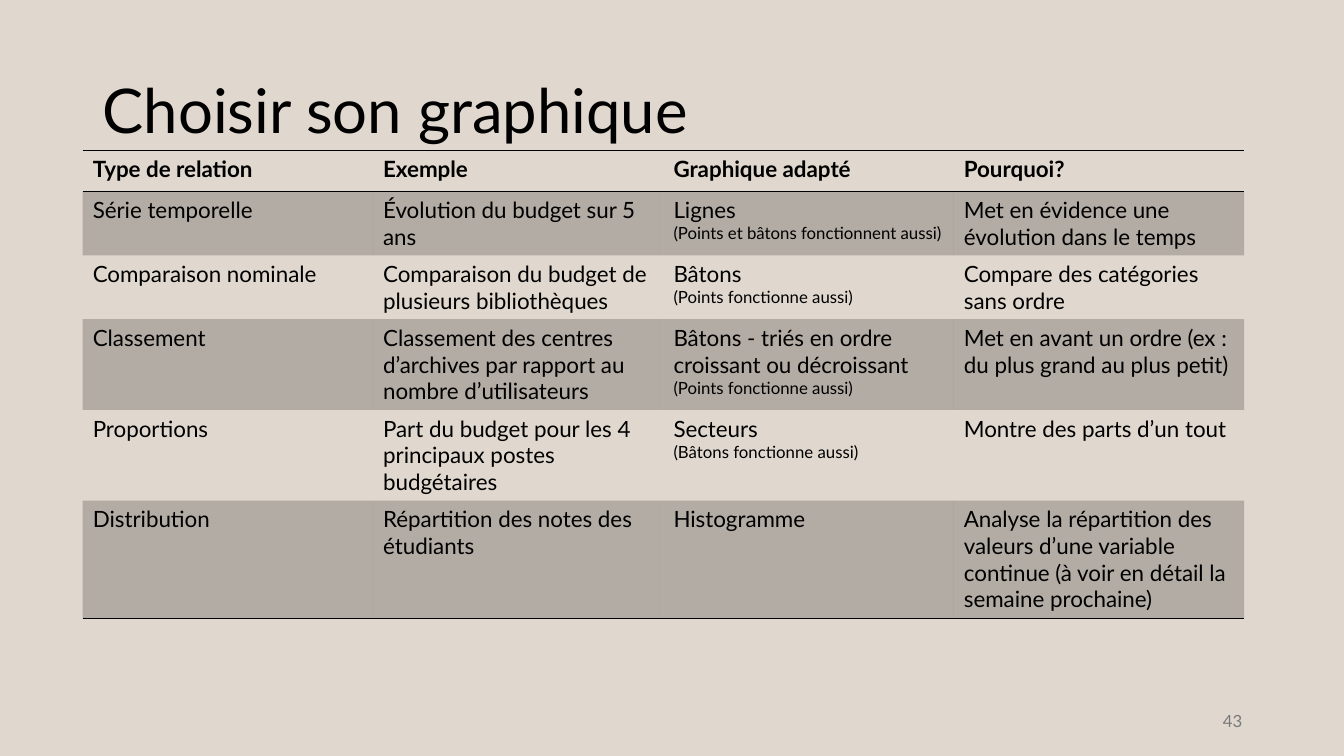
from dataclasses import dataclass

from lxml import etree
from pptx import Presentation
from pptx import util as u
from pptx.dml.color import RGBColor
from pptx.enum import text
from pptx.oxml import ns

PX = 9144
NO_STYLE = "{2D5ABB26-0587-4C30-8999-92F81FD0307C}"


@dataclass(frozen=True)
class Theme:
    """Colours, font and type sizes of the slide."""
    font: str = "Lato"
    background: str = "E0D8CE"
    ink: str = "000000"
    muted: str = "797979"
    title: int = 44
    body: int = 16
    small: int = 12
    stripe_alpha: int = 20000


THEME = Theme()

HEADER = ["Type de relation", "Exemple", "Graphique adapté", "Pourquoi?"]
RELATIONS = [
    ["Série temporelle", "Évolution du budget sur 5 ans",
     "Lignes\n(Points et bâtons fonctionnent aussi)",
     "Met en évidence une évolution dans le temps"],
    ["Comparaison nominale", "Comparaison du budget de plusieurs bibliothèques",
     "Bâtons\n(Points fonctionne aussi)", "Compare des catégories sans ordre"],
    ["Classement",
     "Classement des centres d’archives par rapport au nombre d’utilisateurs",
     "Bâtons - triés en ordre croissant ou décroissant\n(Points fonctionne aussi)",
     "Met en avant un ordre (ex : du plus grand au plus petit)"],
    ["Proportions", "Part du budget pour les 4 principaux postes budgétaires",
     "Secteurs\n(Bâtons fonctionne aussi)", "Montre des parts d’un tout"],
    ["Distribution", "Répartition des notes des étudiants", "Histogramme",
     "Analyse la répartition des valeurs d’une variable continue "
     "(à voir en détail la semaine prochaine)"],
]
ROW_HEIGHTS = [41, 63, 63, 90, 90, 116]
COLUMN_WIDTH = 288


def px(*lengths):
    """Turn pixel lengths into EMU."""
    return [u.Emu(length * PX) for length in lengths]


def set_font(paragraph, size, color=THEME.ink, bold=False):
    """Style a whole paragraph."""
    font = paragraph.font
    font.name, font.size, font.bold = THEME.font, u.Pt(size), bold
    font.color.rgb = RGBColor.from_string(color)


def add_text(page, words, bounds, size, color, align, spacing=1.0):
    """Add one line of vertically centred text."""
    frame = page.shapes.add_textbox(*px(*bounds)).text_frame
    frame.word_wrap = True
    frame.vertical_anchor = text.MSO_ANCHOR.MIDDLE
    paragraph = frame.paragraphs[0]
    paragraph.text, paragraph.alignment = words, align
    paragraph.line_spacing = spacing
    set_font(paragraph, size, color)


def add_borders(cell, sides):
    """Rule the given sides (T, B) of a cell."""
    properties = cell._tc.get_or_add_tcPr()
    for position, side in enumerate(sides):
        line = etree.Element(ns.qn(f"a:ln{side}"), w=str(u.Pt(1)))
        fill = etree.SubElement(line, ns.qn("a:solidFill"))
        etree.SubElement(fill, ns.qn("a:srgbClr"), val=THEME.ink)
        properties.insert(position, line)


def fill_cell(cell, striped):
    """Shade a striped cell and leave any other clear."""
    if not striped:
        cell.fill.background()
        return
    cell.fill.solid()
    cell.fill.fore_color.rgb = RGBColor.from_string(THEME.ink)
    color = cell._tc.tcPr.find(".//" + ns.qn("a:srgbClr"))
    etree.SubElement(color, ns.qn("a:alpha"), val=str(THEME.stripe_alpha))


def write_cell(cell, words, bold):
    """Write a cell, with any second line as a small remark."""
    cell.text = words
    for index, paragraph in enumerate(cell.text_frame.paragraphs):
        set_font(paragraph, THEME.small if index else THEME.body, bold=bold)


def add_relations_table(page, left, top):
    """Add the ruled and striped table of relations."""
    rows = [HEADER, *RELATIONS]
    bounds = px(left, top, COLUMN_WIDTH * len(HEADER), sum(ROW_HEIGHTS))
    table = page.shapes.add_table(len(rows), len(HEADER), *bounds).table
    table._tbl.tblPr.find(ns.qn("a:tableStyleId")).text = NO_STYLE
    for column in table.columns:
        column.width = u.Emu(COLUMN_WIDTH * PX)
    rules = {0: "TB", len(rows) - 1: "B"}
    for index, (row, words) in enumerate(zip(table.rows, rows)):
        row.height = u.Emu(ROW_HEIGHTS[index] * PX)
        for cell, entry in zip(row.cells, words):
            write_cell(cell, entry, bold=index == 0)
            fill_cell(cell, striped=index % 2 == 1)
            add_borders(cell, rules.get(index, ""))


def main():
    """Build and save the slide."""
    deck = Presentation()
    deck.slide_width, deck.slide_height = px(1333, 750)
    page = deck.slides.add_slide(deck.slide_layouts[6])
    page.background.fill.solid()
    page.background.fill.fore_color.rgb = RGBColor.from_string(THEME.background)
    add_text(page, "Choisir son graphique", (92, 40, 1150, 145),
             THEME.title, THEME.ink, text.PP_ALIGN.LEFT, 0.9)
    add_relations_table(page, 82, 149)
    add_text(page, "43", (942, 695, 300, 40),
             THEME.small, THEME.muted, text.PP_ALIGN.RIGHT)
    deck.save("out.pptx")


if __name__ == "__main__":
    main()
